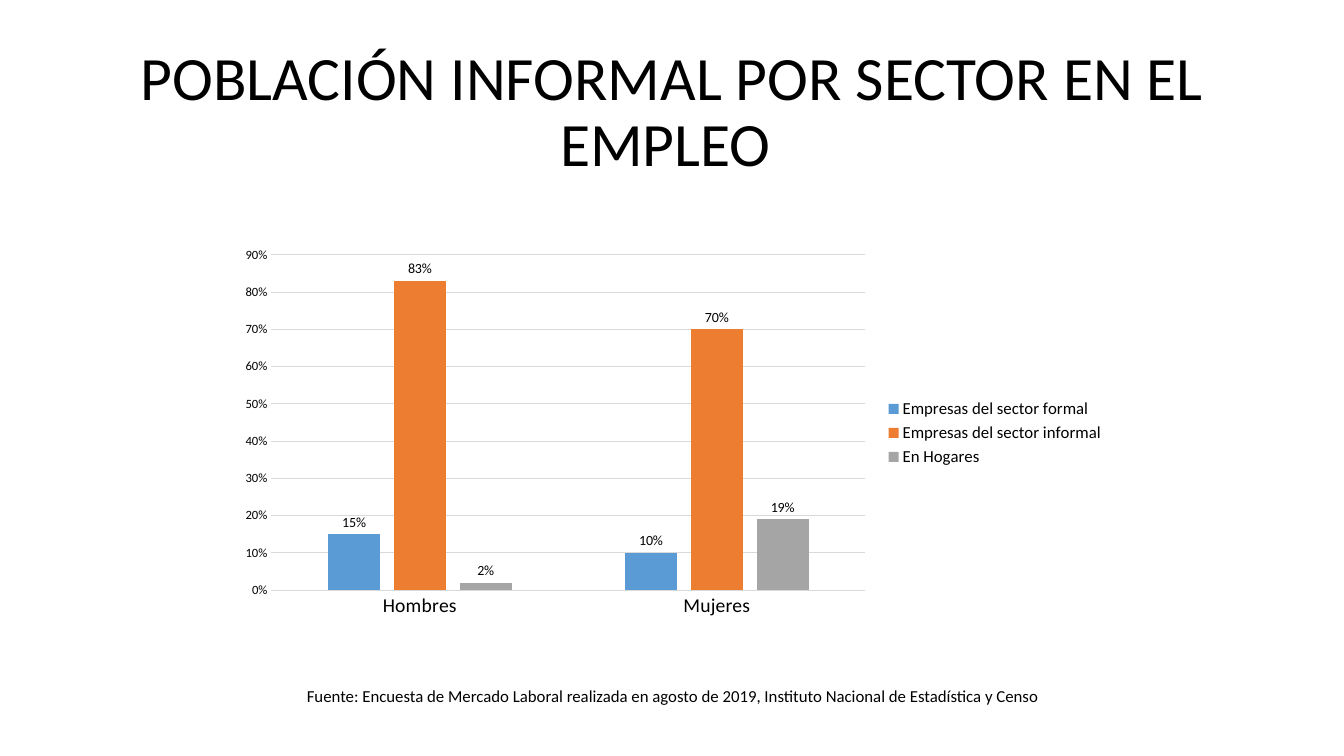
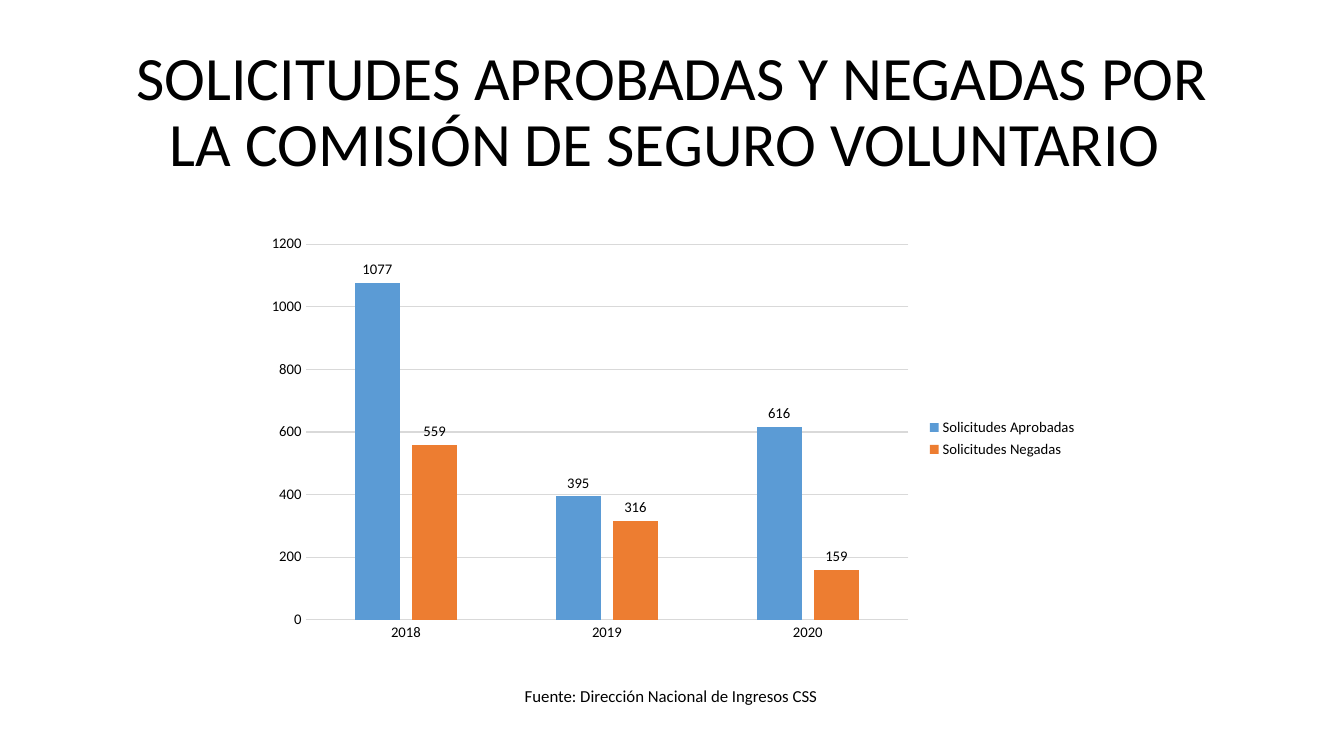
from dataclasses import dataclass

from pptx import Presentation
from pptx import util as u
from pptx.chart import data as cd
from pptx.dml import color
from pptx.enum import chart as ch
from pptx.enum import text


@dataclass(frozen=True)
class Theme:
    font: str = "Calibri"
    ink: str = "000000"
    grid: str = "D9D9D9"
    series: tuple = ("5B9BD5", "ED7D31", "A5A5A5")
    title: float = 44
    source: float = 12
    hairline: float = 0.75


THEME = Theme()
TITLE_BOX = (92, 40, 1150, 145)
SOURCE_BOX = (293, 675, 749, 30)


def px(n):
    return u.Emu(n * 9144)


def rgb(value):
    return color.RGBColor.from_string(value)


def set_font(font, size):
    font.name = THEME.font
    font.size = u.Pt(size)
    font.bold = False
    font.color.rgb = rgb(THEME.ink)


def set_line(line):
    line.width = u.Pt(THEME.hairline)
    line.color.rgb = rgb(THEME.grid)


def add_text(s, box, content, size, anchor=text.MSO_ANCHOR.TOP, spacing=1.0):
    sp = s.shapes.add_textbox(*map(px, box))
    tf = sp.text_frame
    tf.word_wrap = True
    tf.vertical_anchor = anchor
    tf.text = content
    p = tf.paragraphs[0]
    p.alignment = text.PP_ALIGN.CENTER
    p.line_spacing = spacing
    set_font(p.runs[0].font, size)


def style_axes(chart, top, step, fmt, cat_size, val_size):
    cat, val = chart.category_axis, chart.value_axis
    for axis, size in ((cat, cat_size), (val, val_size)):
        axis.major_tick_mark = axis.minor_tick_mark = ch.XL_TICK_MARK.NONE
        set_font(axis.tick_labels.font, size)
    set_line(cat.format.line)
    val.format.line.fill.background()
    val.minimum_scale, val.maximum_scale, val.major_unit = 0, top, step
    val.tick_labels.number_format = fmt
    val.tick_labels.number_format_is_linked = False
    val.has_major_gridlines = True
    set_line(val.major_gridlines.format.line)


def style_series(plot, fmt, size):
    plot.gap_width = 219
    plot.overlap = -27
    plot.vary_by_categories = False
    for series, fill in zip(plot.series, THEME.series):
        series.format.fill.solid()
        series.format.fill.fore_color.rgb = rgb(fill)
        series.invert_if_negative = False
        labels = series.data_labels
        labels.show_value = True
        labels.number_format = fmt
        labels.number_format_is_linked = False
        labels.position = ch.XL_LABEL_POSITION.OUTSIDE_END
        set_font(labels.font, size)


def add_columns(s, box, categories, values, top, step, fmt, size,
                cat_size=None, val_size=None, legend_size=None):
    data = cd.CategoryChartData(number_format=fmt)
    data.categories = categories
    for name, numbers in values.items():
        data.add_series(name, numbers)
    frame = s.shapes.add_chart(
        ch.XL_CHART_TYPE.COLUMN_CLUSTERED, *map(px, box), data)
    chart = frame.chart
    chart.has_title = False
    set_font(chart.font, size)
    chart.has_legend = True
    chart.legend.position = ch.XL_LEGEND_POSITION.RIGHT
    chart.legend.include_in_layout = False
    set_font(chart.legend.font, legend_size or size)
    style_axes(chart, top, step, fmt, cat_size or size, val_size or size)
    style_series(chart.plots[0], fmt, size)


def add_slide(prs, title, source):
    s = prs.slides.add_slide(prs.slide_layouts[6])
    add_text(s, TITLE_BOX, title, THEME.title, text.MSO_ANCHOR.MIDDLE, 0.9)
    add_text(s, SOURCE_BOX, source, THEME.source)
    return s


def main():
    prs = Presentation()
    prs.slide_width, prs.slide_height = px(1333), px(750)

    s = add_slide(
        prs, "POBLACIÓN INFORMAL POR SECTOR EN EL EMPLEO ",
        "Fuente: Encuesta de Mercado Laboral realizada en agosto de 2019, "
        "Instituto Nacional de Estadística y Censo ")
    add_columns(
        s, (226, 238, 880, 383), ["Hombres", "Mujeres"],
        {"Empresas del sector formal": (0.15, 0.10),
         "Empresas del sector informal": (0.83, 0.70),
         "En Hogares": (0.02, 0.19)},
        top=0.9, step=0.1, fmt="0%", size=10,
        cat_size=14, val_size=9, legend_size=12)

    s = add_slide(
        prs, "SOLICITUDES APROBADAS Y NEGADAS POR "
        "LA COMISIÓN DE SEGURO VOLUNTARIO ",
        "Fuente: Dirección Nacional de Ingresos CSS ")
    add_columns(
        s, (253, 225, 826, 420), ["2018", "2019", "2020"],
        {"Solicitudes Aprobadas": (1077, 395, 616),
         "Solicitudes Negadas": (559, 316, 159)},
        top=1200, step=200, fmt="General", size=10.5)

    prs.save("out.pptx")


if __name__ == "__main__":
    main()
